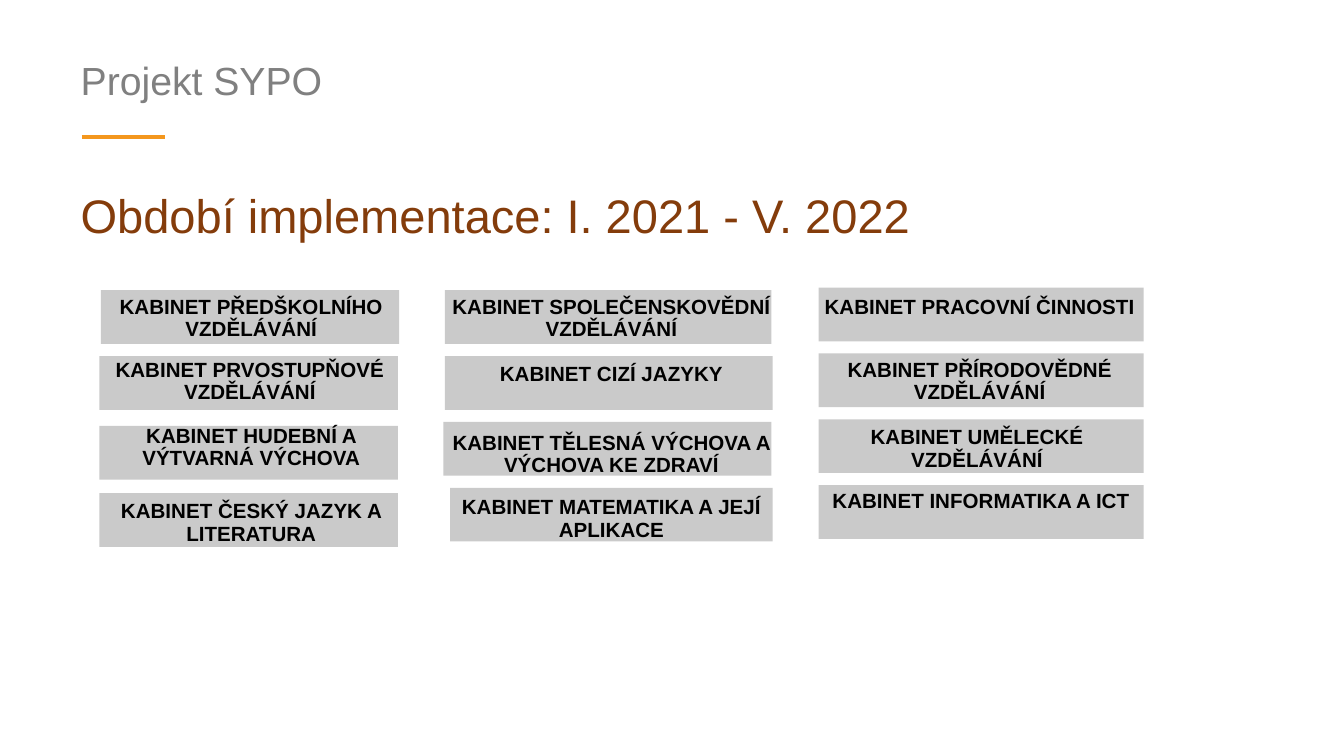
from lxml.etree import SubElement
from pptx import Presentation
from pptx.dml.color import RGBColor
from pptx.enum.shapes import MSO_CONNECTOR, MSO_SHAPE
from pptx.enum.text import MSO_ANCHOR, PP_ALIGN
from pptx.oxml.ns import qn
from pptx.util import Inches, Pt

COLORS = {
    "rule": "F4971D",
    "topic": "808080",
    "title": "843C0B",
    "plate": "CACACA",
    "label": "000000",
}
PAD = Inches(0.05)
PAGE = 10
HIGH = 0.4
WIDE = 2.5

# One row per cabinet: plate (left, top, width), label (left, top, height), name
CABINETS = [
    ((0.75, 2.16, 2.22), (0.62, 2.16, HIGH), "PŘEDŠKOLNÍHO VZDĚLÁVÁNÍ"),
    ((0.74, 2.65, 2.22), (0.61, 2.63, HIGH), "PRVOSTUPŇOVÉ VZDĚLÁVÁNÍ"),
    ((0.74, 3.17, 2.22), (0.62, 3.12, HIGH), "HUDEBNÍ A VÝTVARNÁ VÝCHOVA"),
    ((0.74, 3.67, 2.22), (0.62, 3.68, 0.32), "ČESKÝ JAZYK A LITERATURA"),
    ((3.31, 2.16, 2.43), (3.3, 2.16, HIGH), "SPOLEČENSKOVĚDNÍ VZDĚLÁVÁNÍ"),
    ((3.31, 2.65, 2.44), (3.3, 2.66, HIGH), "CIZÍ JAZYKY"),
    ((3.3, 3.14, 2.44), (3.3, 3.17, HIGH),
     "TĚLESNÁ VÝCHOVA A VÝCHOVA KE ZDRAVÍ"),
    ((3.35, 3.63, 2.4), (3.3, 3.65, HIGH), "MATEMATIKA A JEJÍ APLIKACE"),
    ((6.09, 2.14, 2.42), (6.04, 2.16, HIGH), "PRACOVNÍ ČINNOSTI"),
    ((6.09, 2.63, 2.42), (6.04, 2.63, HIGH), "PŘÍRODOVĚDNÉ VZDĚLÁVÁNÍ"),
    ((6.09, 3.12, 2.42), (6.02, 3.13, HIGH), "UMĚLECKÉ VZDĚLÁVÁNÍ"),
    ((6.09, 3.61, 2.42), (6.05, 3.6, HIGH), "INFORMATIKA A ICT"),
]


def color(name):
    return RGBColor.from_string(COLORS[name])


def add_rule(slide, left, right, top):
    rule = slide.shapes.add_connector(
        MSO_CONNECTOR.STRAIGHT,
        Inches(left), Inches(top), Inches(right), Inches(top))
    rule.line.color.rgb = color("rule")
    rule.line.width = Pt(2)
    SubElement(rule._element.spPr, qn("a:effectLst"))


def add_plate(slide, left, top, width):
    plate = slide.shapes.add_shape(
        MSO_SHAPE.RECTANGLE,
        Inches(left), Inches(top), Inches(width), Inches(HIGH))
    plate.shadow.inherit = False
    plate.fill.solid()
    plate.fill.fore_color.rgb = color("plate")
    plate.line.fill.background()


def add_text(slide, box, text, size, tone, space, bold=False,
             align=PP_ALIGN.LEFT, anchor=MSO_ANCHOR.TOP):
    frame = slide.shapes.add_textbox(*map(Inches, box)).text_frame
    frame.word_wrap = True
    frame.vertical_anchor = anchor
    frame.margin_left = frame.margin_right = PAD
    frame.margin_top = frame.margin_bottom = PAD
    para = frame.paragraphs[0]
    para.alignment = align
    para.line_spacing = space
    run = para.add_run()
    run.text = text
    run.font.name = "Arial"
    run.font.size = Pt(size)
    run.font.bold = bold
    run.font.color.rgb = color(tone)


def main():
    deck = Presentation()
    deck.slide_width = Inches(PAGE)
    deck.slide_height = Inches(PAGE * 9 / 16)
    slide = deck.slides.add_slide(deck.slide_layouts[6])

    add_rule(slide, 0.61, 1.23, 1.02)
    add_text(slide, (0.55, 0.34, 8.69, 0.66), "Projekt SYPO",
             21, "topic", 1.08)

    for plate, _, _ in CABINETS:
        add_plate(slide, *plate)

    add_text(slide, (0.55, 1.2, 7.99, 0.66),
             "Období implementace: I. 2021 - V. 2022",
             25.2, "title", 1.2, anchor=MSO_ANCHOR.BOTTOM)
    for _, (left, top, height), name in CABINETS:
        add_text(slide, (left, top, WIDE, height), f"KABINET {name}",
                 11, "label", 0.9, bold=True, align=PP_ALIGN.CENTER)

    deck.save("out.pptx")


if __name__ == "__main__":
    main()
